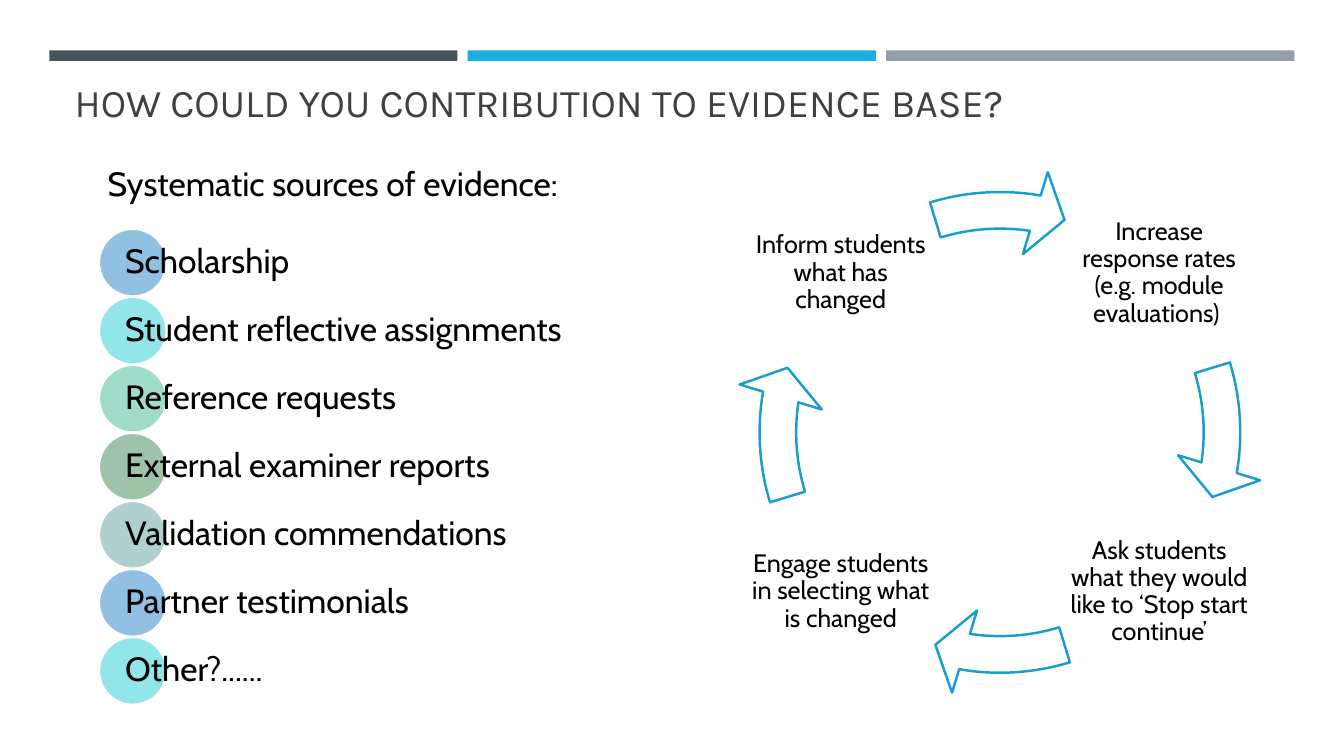
from pptx import Presentation
from pptx.dml.color import RGBColor
from pptx.enum import shapes as sh, text as tx
from pptx.oxml.ns import qn
from pptx.util import Pt
from lxml import etree

HEX = {
    "slate": "465359", "sky": "1CADE4", "grey": "969FA7",
    "title": "404040", "black": "000000", "white": "FFFFFF",
    "edge": "199DCF", "blue": "2683C6", "aqua": "27CED7",
    "mint": "42BA97", "green": "3E8853", "sage": "62A39F",
}
BARS = ["slate", "sky", "grey"]
DOTS = ["blue", "aqua", "mint", "green", "sage"]
ITEMS = [
    "Scholarship", "Student reflective assignments", "Reference requests",
    "External examiner reports", "Validation commendations",
    "Partner testimonials", "Other?......",
]
STEPS = [
    ("Increase response rates (e.g. module evaluations) ", 761, 128),
    ("Ask students what they would like to ‘Stop start continue’", 761, 355.7),
    ("Engage students in selecting what is changed", 533.5, 355.7),
    ("Inform students what has changed", 533.5, 128),
]
MID = tx.MSO_ANCHOR.MIDDLE
TURN = 216
QUARTER = TURN / 4


def rgb(name):
    return RGBColor.from_string(HEX[name])


def add_form(slide, kind, box, fill, line=None):
    form = slide.shapes.add_shape(kind, *map(Pt, box))
    form.shadow.inherit = False
    form.fill.solid()
    form.fill.fore_color.rgb = rgb(fill)
    if line:
        form.line.color.rgb = rgb(line)
        form.line.width = Pt(1.75)
    else:
        form.line.fill.background()
    return form


def add_text(slide, words, box, size, font="Cabin", color="black",
             anchor=tx.MSO_ANCHOR.TOP, pad=(7.2, 3.6),
             align=tx.PP_ALIGN.LEFT, lead=1.0):
    frame = slide.shapes.add_textbox(*map(Pt, box)).text_frame
    frame.word_wrap = True
    frame.vertical_anchor = anchor
    frame.margin_left = frame.margin_right = Pt(pad[0])
    frame.margin_top = frame.margin_bottom = Pt(pad[1])
    frame.text = words
    para = frame.paragraphs[0]
    para.alignment = align
    para.line_spacing = lead
    face = para.runs[0].font
    face.name = font
    face.size = Pt(size)
    face.color.rgb = rgb(color)


def add_dot(slide, box, fill):
    dot = add_form(slide, sh.MSO_SHAPE.OVAL, box, fill, "white")
    tint = dot.fill._xPr.find(qn("a:solidFill"))[0]
    etree.SubElement(tint, qn("a:alpha")).set("val", "50000")


def add_list(slide):
    for i, item in enumerate(ITEMS):
        top = 163.4 + i * 48.6
        add_dot(slide, (70.6, top, 48.5, 48.5), DOTS[i % len(DOTS)])
        add_text(slide, item, (89.3, top, 381, 48.5), 24,
                 anchor=MID, pad=(0, 2.4), lead=0.9)


def add_cycle(slide):
    for i, (words, left, top) in enumerate(STEPS):
        add_text(slide, words, (left, top, 134, 134), 18, anchor=MID,
                 pad=(2.2, 2.2), align=tx.PP_ALIGN.CENTER, lead=0.9)
        arrow = add_form(slide, sh.MSO_SHAPE.CIRCULAR_ARROW,
                         (525, 119.6, 378.5, 378.5), "white", "edge")
        head = (5.5 + i * QUARTER) % TURN
        tail = (205.85 + i * QUARTER) % TURN
        for j, value in enumerate((0.069, 4.65, head, tail, 0.081)):
            arrow.adjustments[j] = value


def main():
    deck = Presentation()
    deck.slide_width, deck.slide_height = Pt(960), Pt(540)
    slide = deck.slides.add_slide(deck.slide_layouts[6])
    for i, color in enumerate(BARS):
        add_form(slide, sh.MSO_SHAPE.RECTANGLE,
                 (35.2 + i * 298.9, 36, 291.6, 7.5), color)
    add_text(slide, "HOW COULD YOU CONTRIBUTION TO EVIDENCE BASE?",
             (46.3, 15.1, 868, 77.8), 28, "Karla", "title",
             tx.MSO_ANCHOR.BOTTOM)
    add_list(slide)
    add_text(slide, "Systematic sources of evidence:",
             (69.8, 113, 379, 36), 24)
    add_cycle(slide)
    deck.save("out.pptx")


if __name__ == "__main__":
    main()
